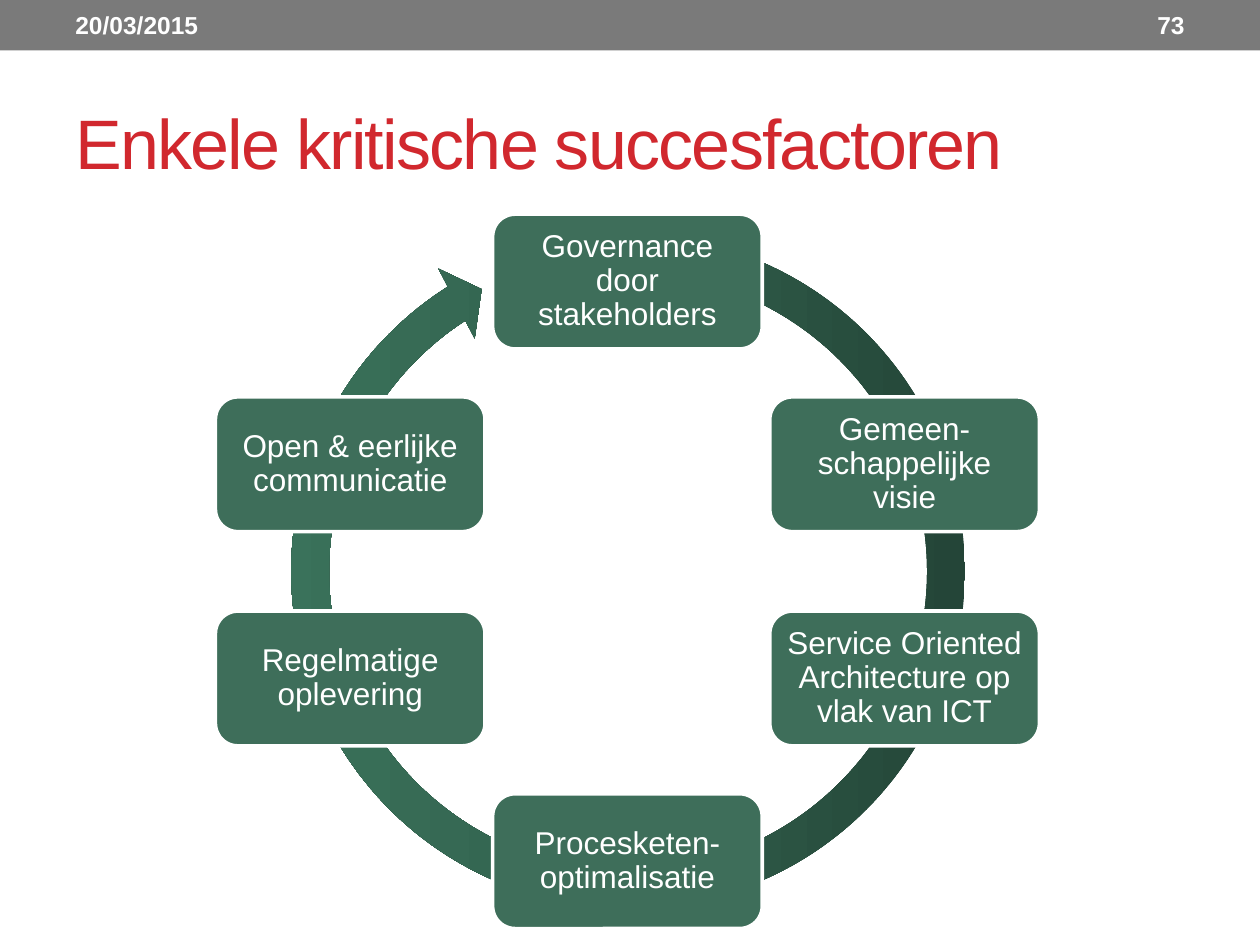
from copy import deepcopy

from pptx import Presentation
from pptx.dml.color import RGBColor
from pptx.enum.shapes import MSO_SHAPE
from pptx.enum.text import MSO_ANCHOR, PP_ALIGN
from pptx.oxml.ns import qn
from pptx.util import Inches, Pt

RECT = MSO_SHAPE.RECTANGLE
ROUNDED = MSO_SHAPE.ROUNDED_RECTANGLE
RING = MSO_SHAPE.CIRCULAR_ARROW
MIDDLE = MSO_ANCHOR.MIDDLE
LEFT, CENTER, RIGHT = PP_ALIGN.LEFT, PP_ALIGN.CENTER, PP_ALIGN.RIGHT

WHITE, GREY, RED, GREEN = "FFFFFF", "7A7A7A", "D1282E", "3E6E5A"
RING_COLORS = ["234336", "31604C", "3A725B"]
RING_ADJUSTMENTS = [0.053, 3.126, 142.42, 171.189, 0.055]

CENTER_X, CENTER_Y = 4.98, 4.535
BOX_W, BOX_H = 2.14, 1.07
SIDE, NEAR, FAR = 2.2, 0.85, 2.3
FACTORS = [
    ("Governance door stakeholders", 0, -FAR),
    ("Gemeen-schappelijke visie", SIDE, -NEAR),
    ("Service Oriented Architecture op vlak van ICT", SIDE, NEAR),
    ("Procesketen-optimalisatie", 0, FAR),
    ("Regelmatige oplevering", -SIDE, NEAR),
    ("Open & eerlijke communicatie", -SIDE, -NEAR),
]


def rgb(value):
    return RGBColor.from_string(value)


def set_text(sp, text, size, color=WHITE, align=LEFT, bold=False, spacing=1.0):
    tf = sp.text_frame
    tf.word_wrap = True
    tf.vertical_anchor = MIDDLE
    p = tf.paragraphs[0]
    p.alignment = align
    p.line_spacing = spacing
    r = p.add_run()
    r.text = text
    for name, value in {"name": "Arial", "size": Pt(size), "bold": bold}.items():
        setattr(r.font, name, value)
    r.font.color.rgb = rgb(color)
    return r


def add_label(s, box, text, size, **style):
    sp = s.shapes.add_textbox(*map(Inches, box))
    return set_text(sp, text, size, **style)


def add_shape(s, kind, box, fill=None):
    sp = s.shapes.add_shape(kind, *map(Inches, box))
    sp.shadow.inherit = False
    sp.line.fill.background()
    if fill:
        sp.fill.solid()
        sp.fill.fore_color.rgb = rgb(fill)
    return sp


def add_ring(s):
    sp = add_shape(s, RING, (2.15, 1.7, 5.67, 5.67))
    for i, value in enumerate(RING_ADJUSTMENTS):
        sp.adjustments[i] = value
    sp.fill.gradient()
    sp.fill.gradient_angle = 180
    stops = sp.element.spPr.find(qn("a:gradFill")).find(qn("a:gsLst"))
    stops.insert(1, deepcopy(stops[0]))
    for i, (stop, color) in enumerate(zip(sp.fill.gradient_stops, RING_COLORS)):
        stop.position = i / 2
        stop.color.rgb = rgb(color)


def add_factor(s, text, dx, dy):
    left = CENTER_X + dx - BOX_W / 2
    top = CENTER_Y + dy - BOX_H / 2
    sp = add_shape(s, ROUNDED, (left, top, BOX_W, BOX_H), GREEN)
    sp.line.color.rgb = rgb(WHITE)
    sp.line.width = Pt(2.08)
    for side in ("left", "right", "top", "bottom"):
        setattr(sp.text_frame, f"margin_{side}", Inches(0.08))
    set_text(sp, text, 18, align=CENTER, spacing=0.9)


def main():
    prs = Presentation()
    prs.slide_width, prs.slide_height = Inches(10), Inches(7.5)
    s = prs.slides.add_slide(prs.slide_layouts[6])
    add_shape(s, RECT, (0, 0, 10, 0.4), GREY)
    title = add_label(s, (0.5, 0.58, 9, 1.08), "Enkele kritische succesfactoren", 40, color=RED)
    title.font._element.set("spc", "-100")
    add_label(s, (0.5, 0.02, 3.17, 0.36), "20/03/2015", 14, bold=True)
    add_label(s, (8.33, 0.02, 1.17, 0.36), "73", 14, align=RIGHT, bold=True)
    add_ring(s)
    for factor in FACTORS:
        add_factor(s, *factor)
    prs.save("out.pptx")


if __name__ == "__main__":
    main()
